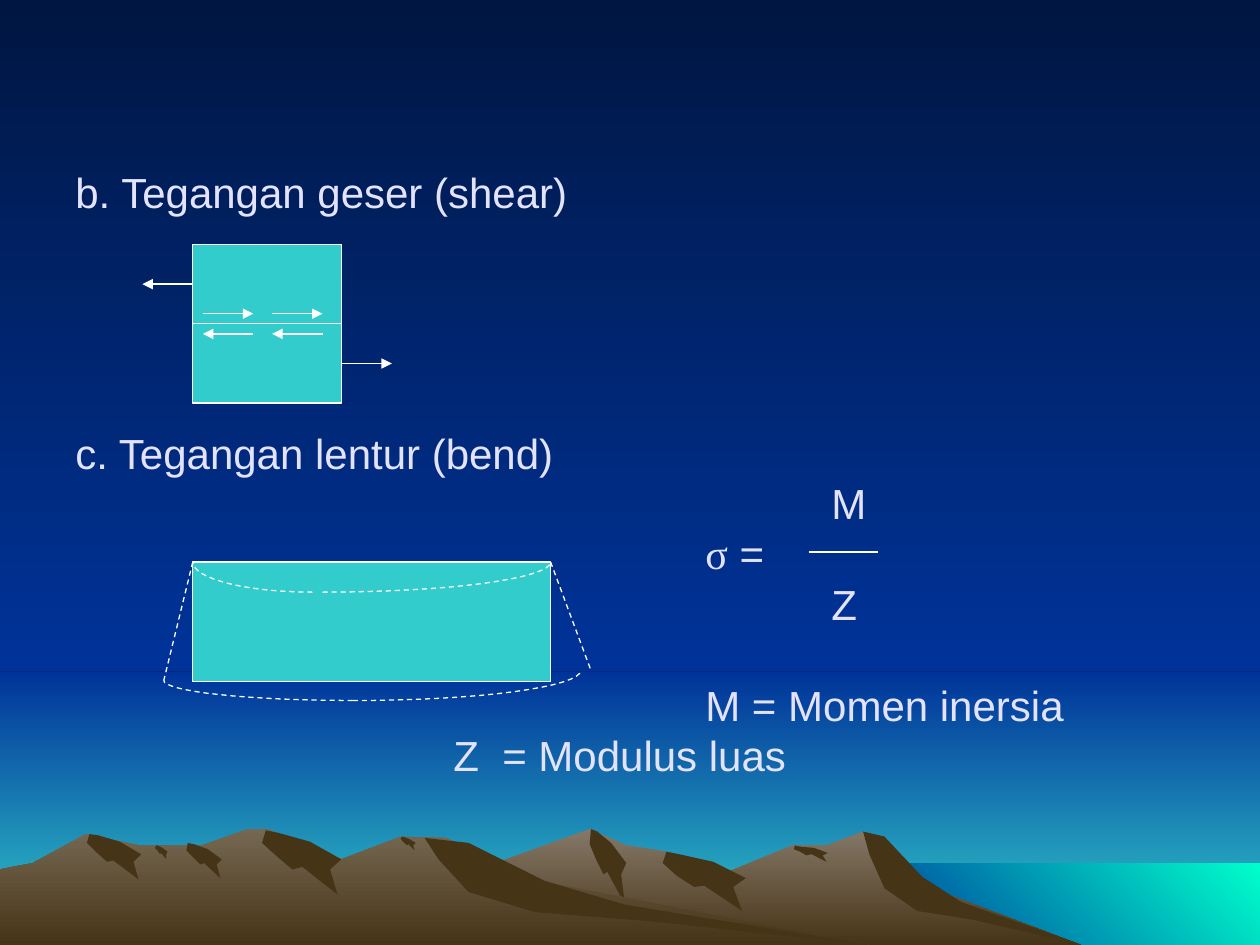
"""Build the slide on shear and bending stress above a mountain landscape."""
from math import cos, pi, sin

from lxml.etree import SubElement
from pptx import Presentation
from pptx.dml.color import RGBColor
from pptx.enum.dml import MSO_LINE
from pptx.enum.shapes import MSO_CONNECTOR, MSO_SHAPE
from pptx.oxml.ns import qn
from pptx.util import Inches, Pt

NIGHT = RGBColor(0x00, 0x16, 0x42)
BLUE = RGBColor(0x00, 0x33, 0x99)
TEAL = RGBColor(0x33, 0xCC, 0xCC)
SEA = RGBColor(0x00, 0xFF, 0xCC)
FAR_ROCK = RGBColor(0x85, 0x78, 0x68)
NEAR_ROCK = RGBColor(0x75, 0x68, 0x52)
EARTH = RGBColor(0x46, 0x34, 0x16)
WHITE = RGBColor(0xFF, 0xFF, 0xFF)
LILAC = RGBColor(0xE3, 0xE3, 0xFF)

CELL = Inches(0.01)
COLUMNS, ROWS = 1000, 750
HORIZON, SHORE = 533, 685
DOWN, UP_RIGHT = 270, 45

deck = Presentation()
deck.slide_width, deck.slide_height = COLUMNS * CELL, ROWS * CELL
slide = deck.slides.add_slide(deck.slide_layouts[6])
shapes = slide.shapes


def shade(fill, start, end, angle):
    fill.gradient()
    fill.gradient_angle = angle
    for stop, color, position in zip(fill.gradient_stops, (start, end), (0, 1)):
        stop.color.rgb = color
        stop.position = position


def stroke(start, end, dashed=False, arrow=False):
    connector = shapes.add_connector(
        MSO_CONNECTOR.STRAIGHT, *(round(v * CELL) for v in (*start, *end)))
    connector.line.color.rgb = WHITE
    connector.line.width = Pt(0.75)
    if dashed:
        connector.line.dash_style = MSO_LINE.DASH
    properties = connector._element.spPr
    if arrow:
        SubElement(properties.find(qn("a:ln")), qn("a:tailEnd"), type="triangle")
    SubElement(properties, qn("a:effectLst"))


shade(slide.background.fill, NIGHT, BLUE, DOWN)
for left, top, bottom, start, end, angle in (
    (0, HORIZON, ROWS, BLUE, TEAL, DOWN),
    (0, 0, HORIZON, NIGHT, BLUE, DOWN),
    (683, SHORE, ROWS, BLUE, SEA, UP_RIGHT),
):
    band = shapes.add_shape(
        MSO_SHAPE.RECTANGLE, left * CELL, top * CELL,
        (COLUMNS - left) * CELL, (bottom - top) * CELL)
    shade(band.fill, start, end, angle)
    band.line.fill.background()
    band.shadow.inherit = False

GULLY = ((0.05, 0), (0, 0.2), (0.17, 0.4), (0.38, 0.6), (0.5, 0.57),
         (0.95, 1), (0.85, 0.6), (1, 0.45), (0.6, 0.18), (0.2, 0.04))
FLANK = ((0, 0), (0.1, 0.05), (0.27, 0.4), (0.45, 0.62), (1, 1),
         (0.5, 0.78), (0.25, 0.7), (0.1, 0.5), (0.03, 0.2))

far_skyline = ((258, ROWS), (394, 685), (468, 658), (497, 671), (529, 676), (566, 697),
               (629, 671), (656, 671), (685, 660), (734, 703), (858, ROWS))
far_shadows = ((FLANK, 685, 660, 173, 90), (GULLY, 468, 658, 29, 60),
               (GULLY, 526, 676, 66, 47), (GULLY, 630, 671, 27, 13))
near_skyline = ((0, ROWS), (0, 690), (26, 685), (68, 662), (111, 671), (160, 671),
                (196, 658), (213, 658), (271, 682), (318, 664), (354, 665),
                (432, 700), (690, ROWS))
near_shadows = ((FLANK, 337, 665, 353, 85), (GULLY, 208, 659, 63, 51),
                (GULLY, 69, 662, 43, 36), (GULLY, 148, 669, 28, 28),
                (GULLY, 123, 671, 10, 11), (GULLY, 318, 664, 12, 11))

for crest, skyline, shadows in (
    (FAR_ROCK, far_skyline, far_shadows), (NEAR_ROCK, near_skyline, near_shadows),
):
    facets = [
        [(left + x * width, top + y * height) for x, y in pattern]
        for pattern, left, top, width, height in shadows]
    for outline in (skyline, *facets):
        builder = shapes.build_freeform(*outline[0], scale=CELL)
        builder.add_line_segments(outline[1:], close=True)
        rock = builder.convert_to_shape()
        if outline is skyline:
            shade(rock.fill, crest, EARTH, DOWN)
        else:
            rock.fill.solid()
            rock.fill.fore_color.rgb = EARTH
        rock.line.fill.background()
        rock.shadow.inherit = False

LINE = 28.8
notes = shapes.add_textbox(50 * CELL, 127 * CELL, 900 * CELL, 495 * CELL)
frame = notes.text_frame
frame.word_wrap = True
for index, (words, indent, gap) in enumerate((
    ("b. Tegangan geser (shear)", 0, 0),
    ("c. Tegangan lentur (bend)", 0, 120.3),
    ("M", 6, 0),
    ("σ =", 5, 0),
    ("Z", 6, 0),
    ("M = Momen inersia", 5, LINE),
    ("Z  = Modulus luas", 3, 0),
)):
    paragraph = frame.add_paragraph() if index else frame.paragraphs[0]
    paragraph.line_spacing = Pt(LINE)
    paragraph.space_before = Pt(gap)
    paragraph._p.get_or_add_pPr().set("marL", str(Inches(indent)))
    paragraph.font.size = Pt(24)
    paragraph.font.color.rgb = LILAC
    for piece in filter(None, words.partition("σ")):
        run = paragraph.add_run()
        run.text = piece
        run.font.name = "Times New Roman" if piece == "σ" else "Arial"

BLOCK_LEFT, BLOCK_TOP, BLOCK_WIDTH, HALF = 153, 194, 118, 63
BEAM_TOP, BEAM_WIDTH, BEAM_HEIGHT = 446, 284, 95
block_right = BLOCK_LEFT + BLOCK_WIDTH
beam_right = BLOCK_LEFT + BEAM_WIDTH
shear_plane = BLOCK_TOP + HALF

for top, width, height in (
    (BLOCK_TOP, BLOCK_WIDTH, HALF),
    (shear_plane, BLOCK_WIDTH, HALF),
    (BEAM_TOP, BEAM_WIDTH, BEAM_HEIGHT),
):
    body = shapes.add_shape(
        MSO_SHAPE.RECTANGLE, BLOCK_LEFT * CELL, top * CELL, width * CELL, height * CELL)
    body.fill.solid()
    body.fill.fore_color.rgb = TEAL
    body.line.color.rgb = WHITE
    body.line.width = Pt(0.75)
    body.shadow.inherit = False

ARROW, OFFSET = 40, 8
pull_y, push_y = shear_plane - HALF / 2, shear_plane + HALF / 2
stroke((BLOCK_LEFT, pull_y), (BLOCK_LEFT - ARROW, pull_y), arrow=True)
stroke((block_right, push_y), (block_right + ARROW, push_y), arrow=True)
for left in (161, 216):
    above, below = shear_plane - OFFSET, shear_plane + OFFSET
    stroke((left, above), (left + ARROW, above), arrow=True)
    stroke((left + ARROW, below), (left, below), arrow=True)

STEPS, FINE = 16, 10
BENT_LEFT, BENT_TOP, BENT_RIGHT, BENT_TIP = 130, 540, 469, 532
for center_x, center_y, reach, sag in (
    (256, BEAM_TOP, beam_right - 256, 24),
    (248, BEAM_TOP, BLOCK_LEFT - 248, 24),
    (280, BENT_TOP, BENT_LEFT - 280, 16),
    (280, BENT_TIP, 181, 24),
):
    angles = [step * pi / 2 / STEPS for step in range(STEPS + 1)]
    curve = [
        (FINE * (center_x + reach * sin(angle)), FINE * (center_y + sag * cos(angle)))
        for angle in angles]
    builder = shapes.build_freeform(*curve[0], scale=CELL / FINE)
    builder.add_line_segments(curve[1:], close=False)
    bend = builder.convert_to_shape()
    bend.fill.background()
    bend.line.color.rgb = WHITE
    bend.line.width = Pt(0.75)
    bend.line.dash_style = MSO_LINE.DASH
    bend.shadow.inherit = False

stroke((BLOCK_LEFT, BEAM_TOP), (BENT_LEFT, BENT_TOP), dashed=True)
stroke((beam_right, BEAM_TOP), (BENT_RIGHT, BENT_TIP), dashed=True)
stroke((642, 438), (697, 438))

deck.save("out.pptx")
